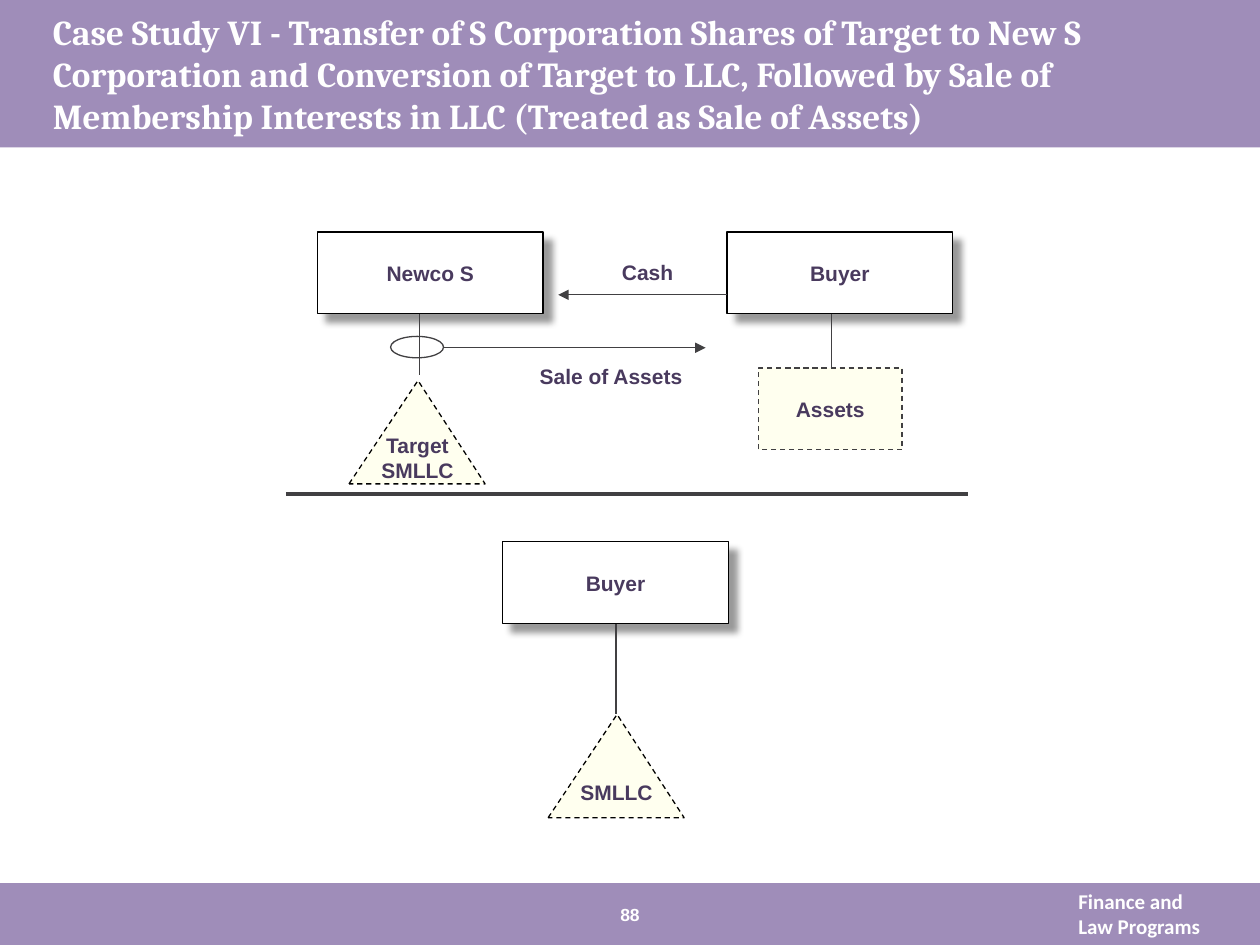
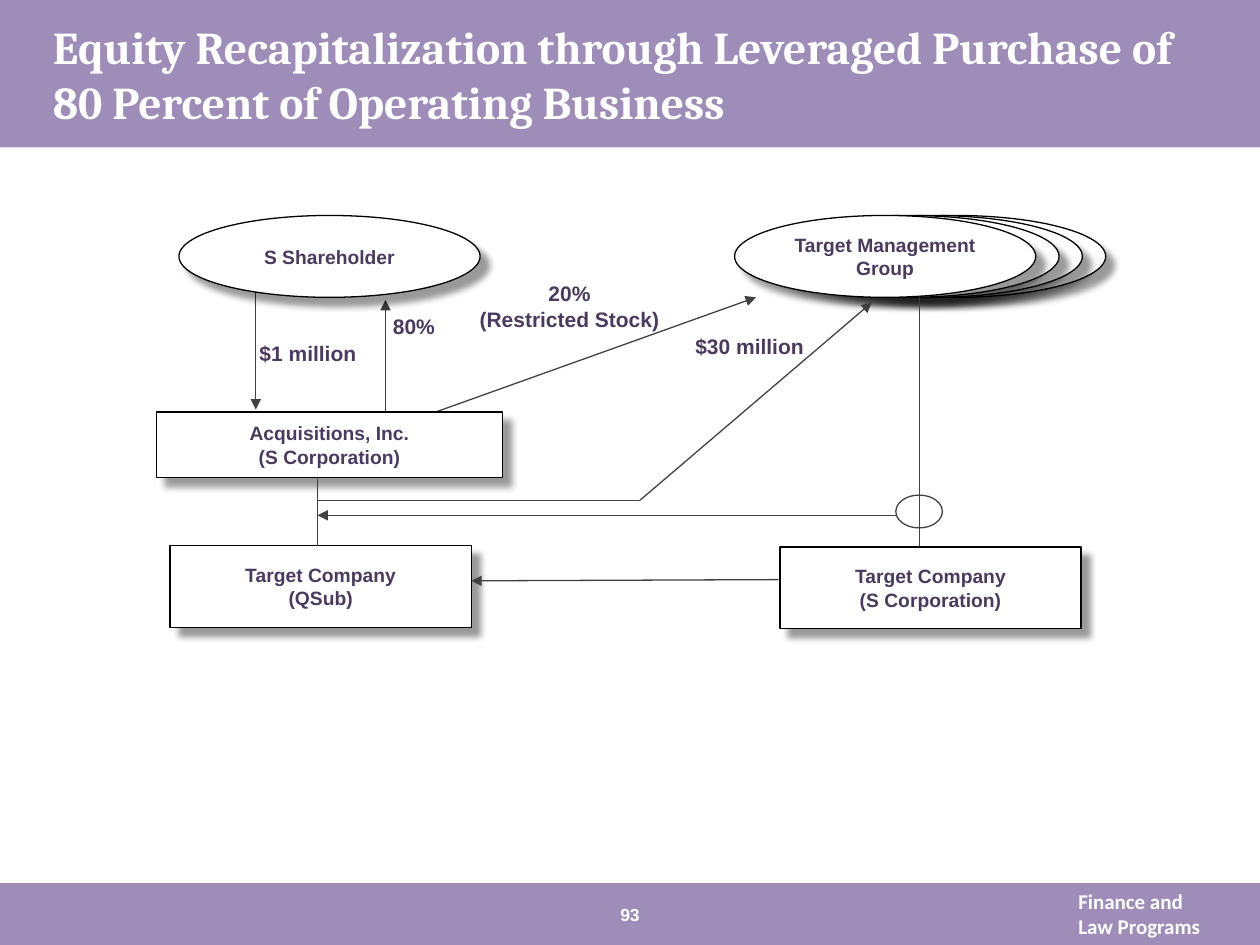
from dataclasses import dataclass

from lxml.etree import SubElement
from pptx import Presentation
from pptx.dml.color import RGBColor
from pptx.enum.dml import MSO_LINE
from pptx.enum.shapes import MSO_CONNECTOR, MSO_SHAPE
from pptx.enum.text import MSO_ANCHOR, MSO_AUTO_SIZE, PP_ALIGN
from pptx.oxml.ns import qn
from pptx.util import Inches, Pt

COLUMNS, ROWS = 10, 7.5  # square grid cells that fill the slide
CELL = Inches(1)


@dataclass(frozen=True)
class Theme:
    band: str = "9F8DB9"
    white: str = "FFFFFF"
    ink: str = "493A5E"
    wire: str = "414042"
    outline: str = "000000"
    cream: str = "FFFFEF"
    title_font: str = "Cambria"
    body_font: str = "Arial"
    footer_font: str = "Calibri"
    label_size: float = 12
    entity_size: float = 11
    number_size: float = 10
    thin: float = 0.75
    thick: float = 2.25


THEME = Theme()


def rgb(value):
    return RGBColor.from_string(value)


def cells(*lengths):
    return [round(length * CELL) for length in lengths]


def write(shape, text, size=THEME.label_size, color=THEME.ink,
          font=THEME.body_font, align=PP_ALIGN.CENTER, anchor=MSO_ANCHOR.MIDDLE,
          wrap=True, inset=None):
    frame = shape.text_frame
    frame.text = text
    frame.word_wrap = wrap
    frame.auto_size = MSO_AUTO_SIZE.NONE
    frame.vertical_anchor = anchor
    if inset is not None:
        frame.margin_left = frame.margin_right = Inches(inset)
        frame.margin_top = frame.margin_bottom = Inches(inset)
    for para in frame.paragraphs:
        para.alignment = align
        para.font.name = font
        para.font.size = Pt(size)
        para.font.bold = True
        para.font.color.rgb = rgb(color)


def add_label(page, at, text, **style):
    box = page.shapes.add_textbox(*cells(*at))
    write(box, text, **{"anchor": MSO_ANCHOR.TOP, **style})
    return box


def add_figure(page, kind, at, fill=None, line=None, dashed=False):
    figure = page.shapes.add_shape(kind, *cells(*at))
    figure.shadow.inherit = False
    if fill:
        figure.fill.solid()
        figure.fill.fore_color.rgb = rgb(fill)
    else:
        figure.fill.background()
    if line:
        figure.line.color.rgb = rgb(line)
        figure.line.width = Pt(THEME.thin)
        if dashed:
            figure.line.dash_style = MSO_LINE.DASH
    else:
        figure.line.fill.background()
    return figure


def cast_shadow(figure):
    effects = figure.element.spPr.find(qn("a:effectLst"))
    shadow = SubElement(effects, qn("a:outerShdw"), blurRad=str(Pt(4)),
                        dist=str(Pt(7)), dir=str(45 * 60000),
                        algn="tl", rotWithShape="0")
    color = SubElement(shadow, qn("a:srgbClr"), val=THEME.outline)
    SubElement(color, qn("a:alpha"), val="40000")


def add_entity(page, at, text="", size=THEME.label_size, kind=MSO_SHAPE.RECTANGLE):
    """White box or oval with a drop shadow: a company or its owners."""
    entity = add_figure(page, kind, at, THEME.white, THEME.outline)
    cast_shadow(entity)
    if text:
        write(entity, text, size)


def add_llc(page, left, top, text):
    """Dashed triangle for a single-member company."""
    llc = add_figure(page, MSO_SHAPE.ISOSCELES_TRIANGLE, (left, top, 1.08, 0.82),
                     THEME.cream, THEME.outline, dashed=True)
    llc.adjustments[0] = 0.507
    write(llc, text, wrap=False)


def add_ring(page, at):
    """Open oval that marks the ownership line being transferred."""
    add_figure(page, MSO_SHAPE.OVAL, at, line=THEME.wire)


def add_line(page, start, end, arrow=False, width=THEME.thin):
    wire = page.shapes.add_connector(MSO_CONNECTOR.STRAIGHT, *cells(*start, *end))
    wire.line.color.rgb = rgb(THEME.wire)
    wire.line.width = Pt(width)
    properties = wire.element.spPr
    if arrow:
        SubElement(properties.find(qn("a:ln")), qn("a:tailEnd"), type="triangle")
    SubElement(properties, qn("a:effectLst"))


def dress_layout(layout, page):
    """Move the bands and the footer text from the page to its layout."""
    shared = [
        add_figure(page, MSO_SHAPE.RECTANGLE, (0, 0, COLUMNS, 1.17), THEME.band),
        add_figure(page, MSO_SHAPE.RECTANGLE, (0, 7.01, COLUMNS, ROWS - 7.01), THEME.band),
        add_label(page, (8.46, 7, 1.46, 0.5), "Finance and \vLaw Programs",
                  color=THEME.white, font=THEME.footer_font, align=PP_ALIGN.LEFT),
    ]
    for index, shape in enumerate(shared, start=2):
        layout.shapes.element.insert(index, shape.element)


def add_page(deck, title, title_size, number):
    page = deck.slides.add_slide(deck.slide_layouts[5])
    heading = page.shapes.title
    heading.left, heading.top, heading.width, heading.height = cells(0.42, 0, 9.2, 1.17)
    write(heading, title, title_size, THEME.white, THEME.title_font,
          PP_ALIGN.LEFT, inset=0)
    add_label(page, (4.5, 7.17, 1, 0.17), number, size=THEME.number_size,
              color=THEME.white, anchor=MSO_ANCHOR.MIDDLE, inset=0)
    return page


def draw_asset_sale(page):
    box_width, box_height, top = 1.79, 0.65, 1.84
    bottom = top + box_height
    add_line(page, (2.27, 3.92), (7.68, 3.92), width=THEME.thick)
    for left, box_top, name in ((2.52, top, "Newco S"), (5.77, top, "Buyer"),
                                (3.99, 4.3, "Buyer")):
        add_entity(page, (left, box_top, box_width, box_height), name)

    add_line(page, (5.77, 2.34), (4.43, 2.34), arrow=True)
    add_label(page, (4.8, 2.01, 0.68, 0.3), "Cash", wrap=False)
    add_line(page, (3.52, 2.76), (5.6, 2.76), arrow=True)
    add_label(page, (4.1, 2.84, 1.5, 0.3), "Sale of Assets")

    add_line(page, (3.33, bottom), (3.33, 2.98))
    add_ring(page, (3.1, 2.67, 0.42, 0.17))
    add_llc(page, 2.77, 3.02, "Target\nSMLLC")

    add_line(page, (6.6, bottom), (6.6, 2.92))
    assets = add_figure(page, MSO_SHAPE.RECTANGLE, (6.02, 2.92, 1.14, box_height),
                        THEME.cream, THEME.wire, dashed=True)
    write(assets, "Assets")

    add_line(page, (4.89, 4.3 + box_height), (4.89, 5.67))
    add_llc(page, 4.35, 5.67, "SMLLC")


def draw_recapitalization(page):
    width, height, top = 2.39, 0.65, 1.71
    bottom = top + height
    for start, end in (((3.43, 3.28), (6, bottom)), ((3.06, 3.41), (3.06, 2.38)),
                       ((2.03, 2.14), (2.03, 3.25))):
        add_line(page, start, end, arrow=True)

    size = THEME.entity_size
    oval = MSO_SHAPE.OVAL
    add_entity(page, (1.42, top, width, height), "S Shareholder", size, oval)
    for step in (3, 2, 1):
        add_entity(page, (5.83 + step * 0.185, top, width, height), kind=oval)
    add_entity(page, (5.83, top, width, height), "Target Management Group", size, oval)
    add_entity(page, (1.24, 3.27, 2.75, 0.52), "Acquisitions, Inc.\n(S Corporation)", size)
    add_entity(page, (1.35, 4.33, width, height), "Target Company\n(QSub)", size)
    add_entity(page, (6.19, 4.34, width, height), "Target Company\n(S Corporation)", size)

    left = PP_ALIGN.LEFT
    add_label(page, (3.02, 2.44, 0.73, 0.26), "80%", align=left)
    add_label(page, (3.72, 2.18, 1.6, 0.58), "20%\n(Restricted Stock)", inset=0.05)
    add_label(page, (2.01, 2.65, 1.1, 0.26), "$1 million", align=left, inset=0.05)
    add_label(page, (5.42, 2.6, 1.28, 0.26), "$30 million", align=left)

    trunk, bend = 2.52, (5.08, 3.97)
    add_line(page, (7.3, bottom), (7.3, 4.33))
    add_ring(page, (7.11, 3.93, 0.37, 0.26))
    add_line(page, (trunk, 3.8), (trunk, 4.33))
    add_line(page, (trunk, bend[1]), bend)
    add_line(page, bend, (6.92, 2.4), arrow=True)
    add_line(page, (6.18, 4.6), (3.74, 4.61), arrow=True)
    add_line(page, (7.11, 4.09), (trunk, 4.09), arrow=True)


def main():
    deck = Presentation()
    deck.slide_width, deck.slide_height = cells(COLUMNS, ROWS)
    sale = add_page(
        deck,
        "Case Study VI - Transfer of S Corporation Shares of Target to New S "
        "Corporation and Conversion of Target to LLC, Followed by Sale of "
        "Membership Interests in LLC (Treated as Sale of Assets)", 20, "88")
    dress_layout(sale.slide_layout, sale)
    draw_asset_sale(sale)
    recapitalization = add_page(
        deck,
        "Equity Recapitalization through Leveraged Purchase of "
        "80 Percent of Operating Business", 26, "93")
    draw_recapitalization(recapitalization)
    deck.save("out.pptx")


if __name__ == "__main__":
    main()
